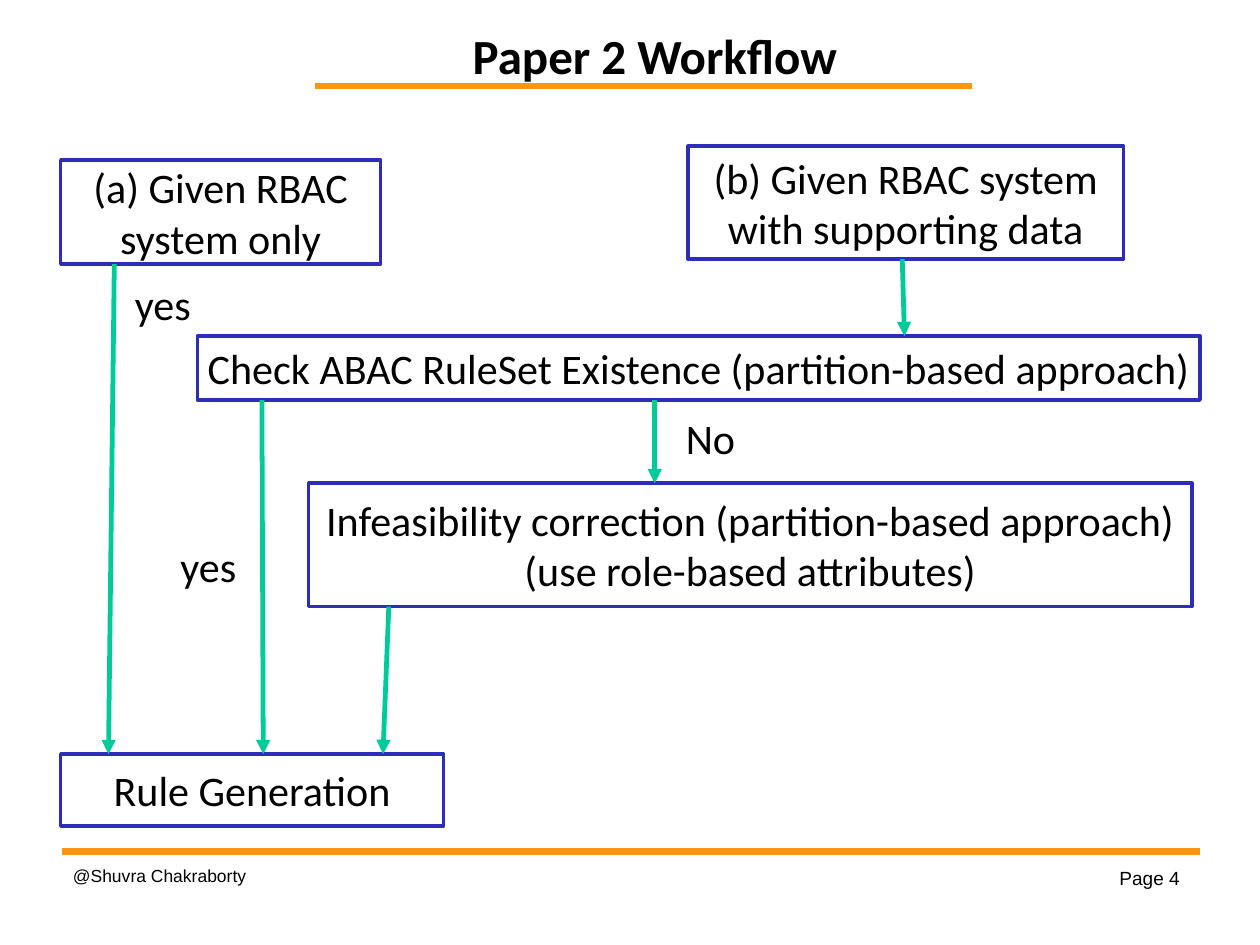
from lxml.etree import SubElement
from pptx import Presentation
from pptx.dml.color import RGBColor
from pptx.enum.shapes import MSO_CONNECTOR, MSO_SHAPE
from pptx.enum.text import MSO_ANCHOR as Anchor, MSO_AUTO_SIZE, PP_ALIGN as Align
from pptx.oxml.ns import qn
from pptx.util import Cm, Pt

COLORS = {"text": "000000", "paper": "FFFFFF", "rule": "FF950E",
          "border": "2D2DB9", "arrow": "00CC99"}

# Steps and labels: left, top, width, height in cm within the workflow region
STEPS = {
    "check": (3.04, 4.22, 22.28, 1.42,
              "Check ABAC RuleSet Existence (partition-based approach)"),
    "generate": (0, 13.51, 8.51, 1.6, "Rule Generation"),
    "correct": (5.51, 7.49, 19.63, 2.74,
                "Infeasibility correction (partition-based approach)\n"
                "(use role-based attributes)"),
    "with_data": (13.94, 0, 9.68, 2.51, "(b) Given RBAC system with supporting data"),
    "rbac_only": (0, 0.31, 7.11, 2.31, "(a) Given RBAC system only"),
}
LABELS = [
    (2.28, 8.76, 2, 1.14, "yes"),
    (13.59, 5.82, 1.7, 1.3, "No"),
    (1.27, 2.92, 2, 1.14, "yes"),
]
# Arrows: source step, target step, x at the start, x at the end
ARROWS = [
    ("check", "generate", 4.47, 4.5),
    ("check", "correct", 13.2, 13.2),
    ("correct", "generate", 7.29, 7.16),
    ("with_data", "check", 18.7, 18.75),
    ("rbac_only", "generate", 1.19, 1.06),
]


def color(name):
    return RGBColor.from_string(COLORS[name])


def write(shape, text, size, font="Calibri", align=Align.CENTER,
          anchor=Anchor.MIDDLE, bold=False, inset=0.15):
    frame = shape.text_frame
    frame.text = text
    frame.word_wrap = True
    frame.auto_size = MSO_AUTO_SIZE.NONE
    frame.vertical_anchor = anchor
    frame.margin_left = frame.margin_right = Cm(inset)
    frame.margin_top = frame.margin_bottom = Cm(0.1)
    for paragraph in frame.paragraphs:
        paragraph.alignment = align
        for run in paragraph.runs:
            run.font.name, run.font.size, run.font.bold = font, Pt(size), bold
            run.font.color.rgb = color("text")


def add_line(slide, x1, y1, x2, y2, line_color, width, arrow=False):
    line = slide.shapes.add_connector(
        MSO_CONNECTOR.STRAIGHT, Cm(x1), Cm(y1), Cm(x2), Cm(y2))
    line.line.color.rgb = color(line_color)
    line.line.width = Pt(width)
    if arrow:
        SubElement(line.line._get_or_add_ln(), qn("a:tailEnd"), type="triangle")
    SubElement(line._element.spPr, qn("a:effectLst"))


def add_box(slide, left, top, width, height, text, border):
    box = slide.shapes.add_shape(
        MSO_SHAPE.RECTANGLE, Cm(left), Cm(top), Cm(width), Cm(height))
    box.shadow.inherit = False
    box.fill.solid()
    box.fill.fore_color.rgb = color("paper")
    box.line.color.rgb = color(border)
    box.line.width = Pt(2.25)
    write(box, text, 26.5)


def add_header(slide, left, top, width, height):
    # Title with the rule below it
    title = slide.shapes.title
    title.left, title.top = Cm(left), Cm(top)
    title.width, title.height = Cm(width), Cm(height)
    write(title, "Paper 2 Workflow", 30.9, anchor=Anchor.BOTTOM, bold=True)
    title.text_frame.paragraphs[0].line_spacing = 0.9
    rule_top = top + height - 0.09
    add_line(slide, left, rule_top, left + 14.6, rule_top, "rule", 4.31)


def add_workflow(slide, left, top):
    # Steps
    for x, y, width, height, text in STEPS.values():
        add_box(slide, left + x, top + y, width, height, text, "border")
    # Answers beside the arrows
    for x, y, width, height, text in LABELS:
        add_box(slide, left + x, top + y, width, height, text, "paper")
    # Arrows run from the bottom of one step to the top of the next
    for source, target, x1, x2 in ARROWS:
        start = STEPS[source][1] + STEPS[source][3]
        end = STEPS[target][1]
        add_line(slide, left + x1, top + start, left + x2, top + end,
                 "arrow", 3, arrow=True)


def add_footer(slide, left, top, width):
    add_line(slide, left, top, left + width, top, "rule", 4.31)
    # Author on the left, page number on the right
    author = slide.shapes.add_textbox(Cm(left), Cm(top + 0.03), Cm(7.7), Cm(1.02))
    write(author, "@Shuvra Chakraborty", 11, "Arial", Align.LEFT, inset=0.25)
    page = slide.shapes.add_textbox(
        Cm(left + width - 3.8), Cm(top + 0.2), Cm(3.6), Cm(0.76))
    write(page, "Page 4", 12, "Arial", Align.RIGHT, inset=0.25)


def main():
    presentation = Presentation()
    presentation.slide_width, presentation.slide_height = Cm(28), Cm(21)
    slide = presentation.slides.add_slide(presentation.slide_layouts[5])
    slide.background.fill.solid()
    slide.background.fill.fore_color.rgb = color("paper")
    add_header(slide, 7, 0.58, 15.1, 1.42)
    add_workflow(slide, 1.35, 3.25)
    add_footer(slide, 1.37, 18.92, 25.3)
    presentation.save("out.pptx")


if __name__ == "__main__":
    main()
